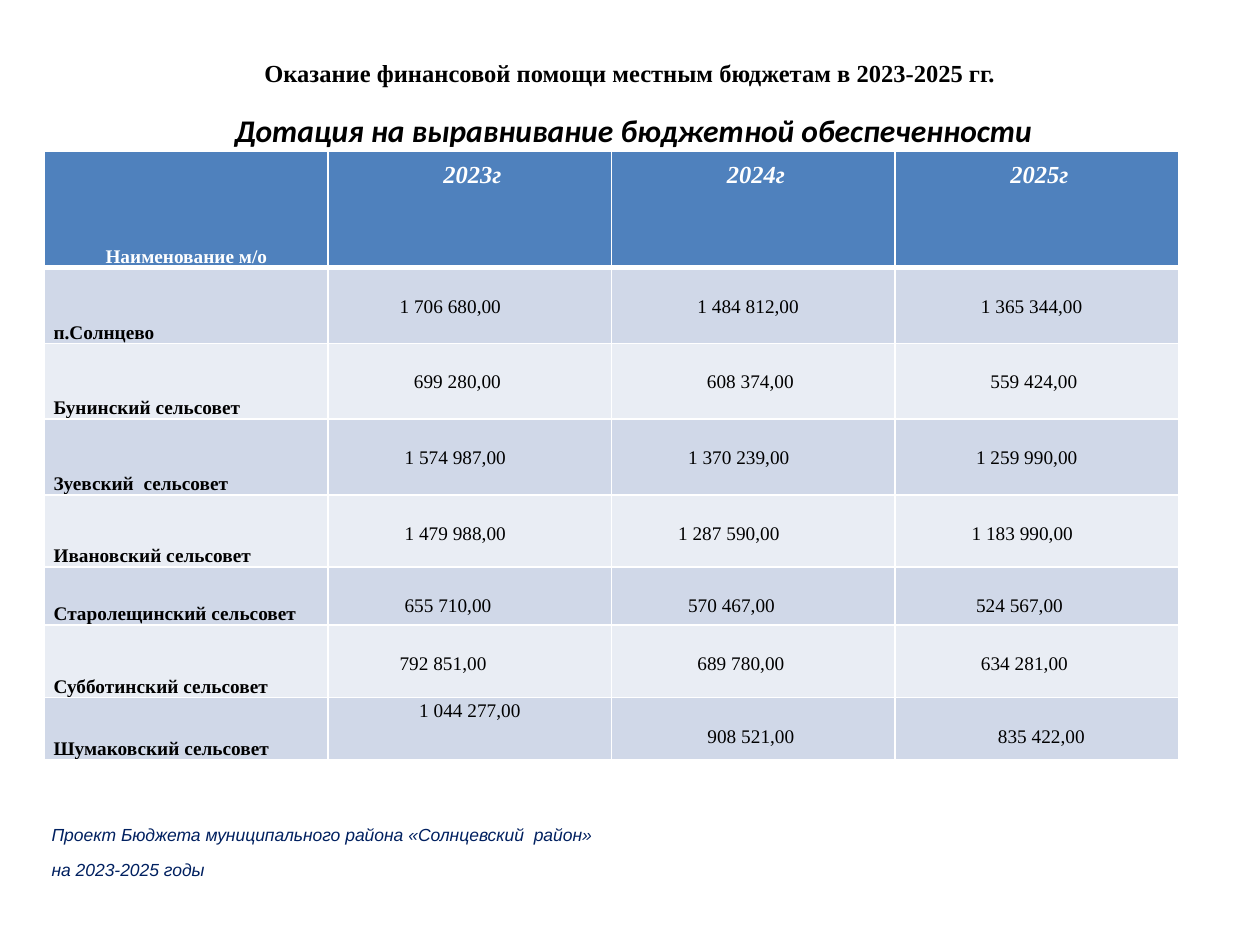
from lxml.etree import SubElement
from pptx import Presentation
from pptx.dml.color import RGBColor
from pptx.enum.text import MSO_ANCHOR as Anchor, MSO_AUTO_SIZE as AutoSize, PP_ALIGN as Align
from pptx.oxml import parse_xml
from pptx.oxml.ns import nsdecls, qn
from pptx.util import Cm, Pt

COLORS = {"black": "000000", "white": "FFFFFF", "navy": "002060",
          "header": "4F81BD", "odd": "D0D8E8", "even": "E9EDF4"}
SERIF = "Times New Roman"
FORMATS = {
    "title": {"name": SERIF, "size": Pt(14), "bold": True, "italic": False, "color": "black"},
    "subtitle": {"name": "Calibri", "size": Pt(18), "bold": True, "italic": True, "color": "black"},
    "footer": {"name": "Arial", "size": Pt(10), "bold": False, "italic": True, "color": "navy"},
    "corner": {"name": SERIF, "size": Pt(11), "bold": True, "italic": False, "color": "white"},
    "year": {"name": SERIF, "size": Pt(14), "bold": True, "italic": True, "color": "white"},
    "council": {"name": SERIF, "size": Pt(11), "bold": True, "italic": False, "color": "black"},
    "amount": {"name": SERIF, "size": Pt(11), "bold": False, "italic": False, "color": "black"},
}
SIDE = 0.18
LINE = 0.51
HEADER = ["Наименование м/о", "2023г", "2024г", "2025г"]
HEADER_HEIGHT = 2.34
COUNCILS = [
    ("п.Солнцево", 1.53, ["1 706 680,00", "1 484 812,00", "1 365 344,00"], [1.44, 1.73, 1.73]),
    ("Бунинский сельсовет", 1.53, ["699 280,00", "608 374,00", "559 424,00"], [1.73, 1.92, 1.92]),
    ("Зуевский  сельсовет", 1.53, ["1 574 987,00", "1 370 239,00", "1 259 990,00"], [1.54, 1.54, 1.63]),
    ("Ивановский сельсовет", 1.45, ["1 479 988,00", "1 287 590,00", "1 183 990,00"], [1.54, 1.34, 1.54]),
    ("Старолещинский сельсовет", 1.17, ["655 710,00", "570 467,00", "524 567,00"], [1.54, 1.54, 1.63]),
    ("Субботинский сельсовет", 1.46, ["792 851,00", "689 780,00", "634 281,00"], [1.44, 1.73, 1.73]),
    ("Шумаковский сельсовет", 1.25, ["1 044 277,00", "908 521,00", "835 422,00"], [SIDE, 0.08, 0.36]),
]


def write(paragraph, text, style, **layout):
    """Put one formatted run in a paragraph and set the paragraph's layout."""
    run = paragraph.add_run()
    run.text = text
    for key, value in FORMATS[style].items():
        if key == "color":
            run.font.color.rgb = RGBColor.from_string(COLORS[value])
        else:
            setattr(run.font, key, value)
    for key, value in layout.items():
        setattr(paragraph, key, value)


def set_borders(cell, top, bottom):
    """Draw white cell borders with the given top and bottom widths in points."""
    properties = cell._tc.get_or_add_tcPr()
    for index, (side, width) in enumerate(zip("LRTB", (1, 1, top, bottom))):
        line = parse_xml(f'<a:ln{side} {nsdecls("a")} w="{Pt(width)}"/>')
        fill = SubElement(line, qn("a:solidFill"))
        SubElement(fill, qn("a:srgbClr"), val=COLORS["white"])
        properties.insert(index, line)


def fill_cell(cell, text, style, fill, margins, anchor=Anchor.TOP, align=Align.LEFT, top=1, bottom=1):
    """Write and format one table cell, with margins in centimetres."""
    cell.fill.solid()
    cell.fill.fore_color.rgb = RGBColor.from_string(COLORS[fill])
    cell.vertical_anchor = anchor
    for side, value in zip(("left", "top", "right", "bottom"), margins):
        setattr(cell, f"margin_{side}", Cm(value))
    set_borders(cell, top, bottom)
    write(cell.text_frame.paragraphs[0], text, style, alignment=align, line_spacing=1.15)


def add_title(slide, box):
    """Place and format the slide title."""
    title = slide.shapes.title
    for key, value in zip(("left", "top", "width", "height"), box):
        setattr(title, key, Cm(value))
    title.text_frame.vertical_anchor = Anchor.MIDDLE
    write(title.text_frame.paragraphs[0],
          "Оказание финансовой помощи местным бюджетам в 2023-2025 гг.", "title", alignment=Align.CENTER)


def add_text(slide, box, lines, style, align, gap=0):
    """Add a wrapped text box with one paragraph for each line."""
    frame = slide.shapes.add_textbox(*map(Cm, box)).text_frame
    frame.word_wrap = True
    frame.auto_size = AutoSize.SHAPE_TO_FIT_TEXT
    for index, line in enumerate(lines):
        paragraph = frame.add_paragraph() if index else frame.paragraphs[0]
        write(paragraph, line, style, alignment=align, space_before=Pt(gap if index else 0))


def add_grants_table(slide, left, top, width):
    """Add the table of grants by council and year."""
    heights = [HEADER_HEIGHT] + [council[1] for council in COUNCILS]
    table = slide.shapes.add_table(len(heights), len(HEADER), Cm(left), Cm(top),
                                   Cm(width), Cm(sum(heights))).table
    for column in table.columns:
        column.width = Cm(width / len(HEADER))
    for row, height in zip(table.rows, heights):
        row.height = Cm(height)
    for column, text in enumerate(HEADER):
        style, margins, anchor = (("year", (0.35, 0.13, 0.25, 0.13), Anchor.TOP) if column
                                  else ("corner", (SIDE, 0, SIDE, 0), Anchor.BOTTOM))
        fill_cell(table.cell(0, column), text, style, "header", margins, anchor, Align.CENTER, bottom=3)
    for row, (name, _, amounts, indents) in enumerate(COUNCILS, 1):
        fill = "odd" if row % 2 else "even"
        top_line = 3 if row == 1 else 1
        last = row == len(COUNCILS)
        fill_cell(table.cell(row, 0), name, "council", fill, (SIDE, 0, SIDE, 0), Anchor.BOTTOM, top=top_line)
        for column, (amount, indent) in enumerate(zip(amounts, indents), 1):
            drop = 0 if last and column == 1 else LINE
            fill_cell(table.cell(row, column), amount, "amount", fill, (indent, drop, SIDE, 0),
                      align=Align.CENTER if last else Align.LEFT, top=top_line)


def main():
    """Build and save the presentation."""
    presentation = Presentation()
    presentation.slide_width, presentation.slide_height = Cm(25.4), Cm(19.05)
    slide = presentation.slides.add_slide(presentation.slide_layouts[5])
    add_title(slide, (1.27, 0.76, 22.86, 1.42))
    add_grants_table(slide, 0.9, 3.05, 22.86)
    add_text(slide, (1.32, 2.11, 22.9, 1.02),
             ["Дотация на выравнивание бюджетной обеспеченности"], "subtitle", Align.CENTER)
    add_text(slide, (0.79, 16.48, 19.74, 1.45),
             ["Проект Бюджета муниципального района «Солнцевский  район»", "на 2023-2025 годы"],
             "footer", Align.LEFT, gap=8)
    presentation.save("out.pptx")


if __name__ == "__main__":
    main()
